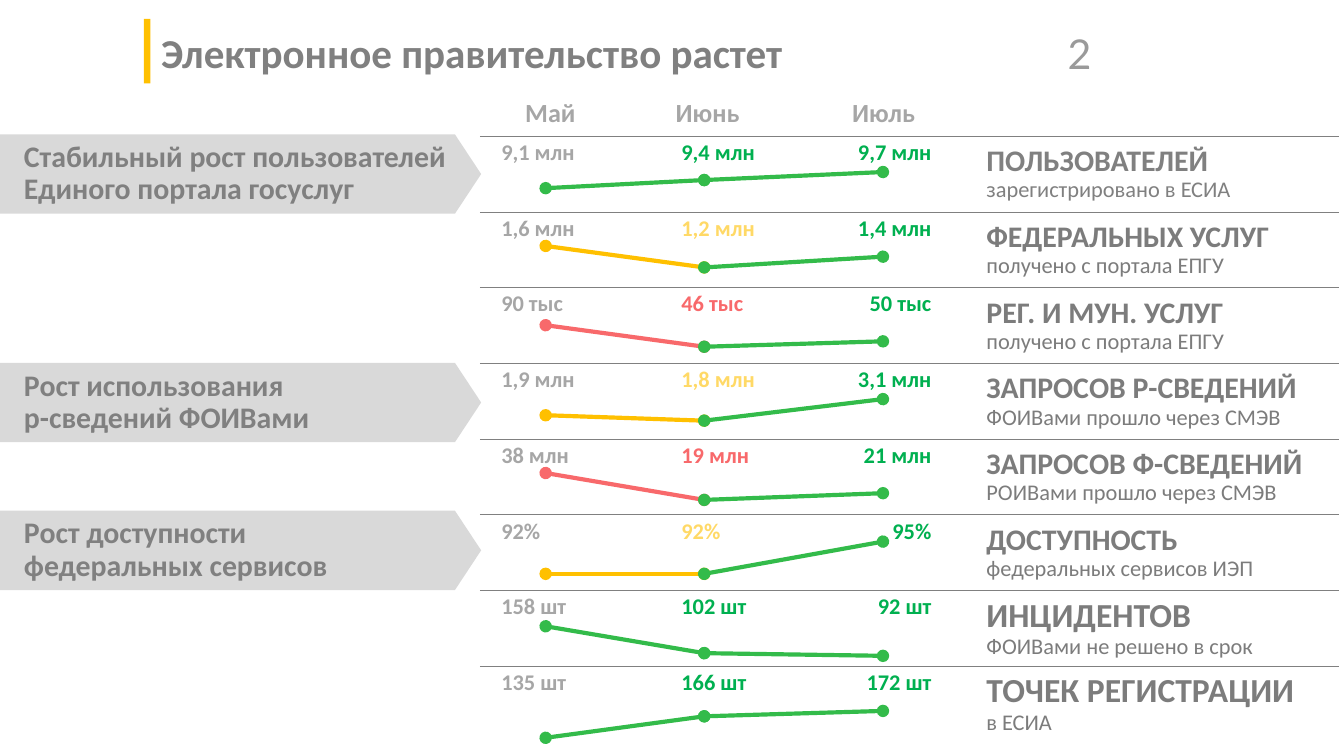
from lxml.etree import SubElement
from pptx import Presentation
from pptx.dml.color import RGBColor
from pptx.enum.shapes import MSO_CONNECTOR as CONN, MSO_SHAPE as SHAPE
from pptx.enum.text import MSO_ANCHOR as ANCHOR, PP_ALIGN as ALIGN
from pptx.oxml.ns import qn
from pptx.util import Inches, Pt

GREY, PALE, LABEL = "808080", "A6A6A6", "7C7C7C"
GREEN, YELLOW, RED = "00B050", "FFD966", "F8696B"
LINE_COLORS = {GREEN: "33BB4A", YELLOW: "FFC000", RED: "F8696B"}
NO_STYLE = "{2D5ABB26-0587-4C30-8999-92F81FD0307C}"

MONTHS = ["Май", "Июнь", "Июль"]
MONTH_X = [4.06, 5.24, 6.57]
COL_WIDTHS = [1.05, 1.29, 1.33, 2.72]
HEADER_H, TABLE_H = 0.33, 4.84
METRICS = [
    (["9,1 млн", "9,4 млн", "9,7 млн"], GREEN, [1.4, 1.34, 1.28],
     "ПОЛЬЗОВАТЕЛЕЙ", "зарегистрировано в ЕСИА", 16),
    (["1,6 млн", "1,2 млн", "1,4 млн"], YELLOW, [1.83, 1.99, 1.91],
     "ФЕДЕРАЛЬНЫХ УСЛУГ", "получено с портала ЕПГУ", 16),
    (["90 тыс", "46 тыс", "50 тыс"], RED, [2.42, 2.58, 2.54],
     "РЕГ. И МУН. УСЛУГ", "получено с портала ЕПГУ", 16),
    (["1,9 млн", "1,8 млн", "3,1 млн"], YELLOW, [3.09, 3.13, 2.97],
     "ЗАПРОСОВ Р-СВЕДЕНИЙ", "ФОИВами прошло через СМЭВ", 16),
    (["38 млн", "19 млн", "21 млн"], RED, [3.52, 3.72, 3.67],
     "ЗАПРОСОВ Ф-СВЕДЕНИЙ", "РОИВами прошло через СМЭВ", 16),
    (["92%", "92%", "95%"], YELLOW, [4.27, 4.27, 4.03],
     "ДОСТУПНОСТЬ", "федеральных сервисов ИЭП", 16),
    (["158 шт", "102 шт", "92 шт"], GREEN, [4.66, 4.86, 4.88],
     "ИНЦИДЕНТОВ", "ФОИВами не решено в срок", 18),
    (["135 шт", "166 шт", "172 шт"], GREEN, [5.49, 5.33, 5.29],
     "ТОЧЕК РЕГИСТРАЦИИ", "в ЕСИА", 18),
]
BANNERS = [
    (1.0, ["Стабильный рост пользователей Единого портала госуслуг"]),
    (2.7, ["Рост использования", "р-сведений ФОИВами"]),
    (3.8, ["Рост доступности", "федеральных сервисов"]),
]


def rgb(value):
    """Turn a hex string into a colour."""
    return RGBColor.from_string(value)


class Deck:
    """Slide style and one method for each kind of element."""

    font = "Calibri"

    def __init__(self, prs):
        self.s = prs.slides.add_slide(prs.slide_layouts[6])

    def style(self, p, size, color, bold=True, align=ALIGN.LEFT, spacing=1.0, indent=0, font=None):
        """Format one paragraph and its runs."""
        p.alignment, p.line_spacing = align, spacing
        if indent:
            p._p.get_or_add_pPr().set("marL", str(Inches(indent)))
        for r in p.runs:
            r.font.name, r.font.size, r.font.bold = font or self.font, Pt(size), bold
            r.font.color.rgb = rgb(color)
        if not p.runs:
            SubElement(p._p, qn("a:endParaRPr"), sz=str(size * 100))

    def shape(self, kind, x, y, w, h, fill):
        """Add a plain filled shape."""
        sp = self.s.shapes.add_shape(kind, Inches(x), Inches(y), Inches(w), Inches(h))
        sp.shadow.inherit = False
        sp.fill.solid()
        sp.fill.fore_color.rgb = rgb(fill)
        sp.line.fill.background()
        return sp

    def text(self, x, y, w, h, text, margins, anchor, size, color, **style):
        """Add a one-paragraph text box."""
        tf = self.s.shapes.add_textbox(Inches(x), Inches(y), Inches(w), Inches(h)).text_frame
        tf.word_wrap, tf.vertical_anchor = True, anchor
        tf.margin_left, tf.margin_top, tf.margin_right, tf.margin_bottom = map(Inches, margins)
        tf.text = text
        self.style(tf.paragraphs[0], size, color, **style)

    def banner(self, y, lines):
        """Add a grey pointer with a statement."""
        sp = self.shape(SHAPE.PENTAGON, 0, y, 3.58, 0.59, "D9D9D9")
        sp.adjustments[0] = 0.33
        tf = sp.text_frame
        tf.word_wrap, tf.vertical_anchor = True, ANCHOR.MIDDLE
        tf.text = "\n".join(lines)
        for p in tf.paragraphs:
            self.style(p, 16, GREY, spacing=0.9, indent=0.08)

    def segment(self, start, end, color):
        """Add a trend line with round ends."""
        cn = self.s.shapes.add_connector(CONN.STRAIGHT, *map(Inches, start + end))
        cn.line.width = Pt(2.25)
        cn.line.color.rgb = rgb(color)
        ln = cn.line._get_or_add_ln()
        for tag in ("a:headEnd", "a:tailEnd"):
            SubElement(ln, qn(tag)).set("type", "oval")
        SubElement(cn._element.spPr, qn("a:effectLst"))

    def table(self, x, y, widths, heights):
        """Add an unstyled table."""
        table = self.s.shapes.add_table(len(heights), len(widths), Inches(x), Inches(y),
                                        Inches(sum(widths)), Inches(sum(heights))).table
        table.first_row = table.horz_banding = False
        table._tbl.tblPr.find(qn("a:tableStyleId")).text = NO_STYLE
        for col, width in zip(table.columns, widths):
            col.width = Inches(width)
        for row, height in zip(table.rows, heights):
            row.height = Inches(height)
        return table

    def cell(self, cell, text, left=0.1, right=0.1, anchor=ANCHOR.TOP, rule=True):
        """Fill a cell and return its paragraphs."""
        if rule:
            ln = SubElement(cell._tc.get_or_add_tcPr(), qn("a:lnB"), w=str(Pt(0.5)))
            fill = SubElement(ln, qn("a:solidFill"))
            SubElement(fill, qn("a:srgbClr"), val=GREY)
        cell.fill.background()
        cell.margin_left, cell.margin_right = Inches(left), Inches(right)
        cell.margin_top = cell.margin_bottom = Inches(0.05)
        cell.vertical_anchor = anchor
        cell.text = text
        return cell.text_frame.paragraphs


def main():
    """Build the slide and save it."""
    prs = Presentation()
    prs.slide_width, prs.slide_height = Inches(10), Inches(10) * 9 // 16
    deck = Deck(prs)
    deck.shape(SHAPE.RECTANGLE, 1.07, 0.14, 0.05, 0.48, "FFC000")
    deck.text(7.6, 0.17, 0.59, 0.44, "2", (0.07, 0.04, 0.07, 0.04), ANCHOR.TOP,
              22, "9A9A9A", bold=False, align=ALIGN.RIGHT, font="Lato")
    deck.text(1.1, 0.1, 6.46, 0.59, "Электронное правительство растет",
              (0.1, 0.1, 0.1, 0.05), ANCHOR.MIDDLE, 22, GREY, spacing=0.8)

    row_h = (TABLE_H - HEADER_H) / len(METRICS)
    table = deck.table(3.57, 0.68, COL_WIDTHS, [HEADER_H] + [row_h] * len(METRICS))
    for col, month in enumerate(MONTHS + [""]):
        p = deck.cell(table.cell(0, col), month)[0]
        deck.style(p, 14, PALE, align=ALIGN.CENTER)

    for row, (values, color, ys, name, note, size) in enumerate(METRICS, 1):
        rule = row < len(METRICS)
        formats = [
            (0.16, 0.1, PALE, ALIGN.LEFT, 0),
            (0.1, 0.1, color, ALIGN.LEFT, 0.35),
            (0.1, 0.31, GREEN, ALIGN.RIGHT, 0.16),
        ]
        for col, (value, (left, right, ink, align, indent)) in enumerate(zip(values, formats)):
            p = deck.cell(table.cell(row, col), value, left, right, rule=rule)[0]
            deck.style(p, 12, ink, align=align, spacing=0.8, indent=indent)
        title, detail = deck.cell(table.cell(row, 3), f"{name}\n{note}",
                                  anchor=ANCHOR.MIDDLE, rule=rule)
        ink = GREY if row == 1 else LABEL
        deck.style(title, size, ink, spacing=0.9)
        deck.style(detail, 12, ink, bold=False, spacing=0.9)

        points = list(zip(MONTH_X, ys))
        for start, end, ink in zip(points, points[1:], (color, GREEN)):
            deck.segment(start, end, LINE_COLORS[ink])
    for y, lines in BANNERS:
        deck.banner(y, lines)
    prs.save("out.pptx")


if __name__ == "__main__":
    main()
